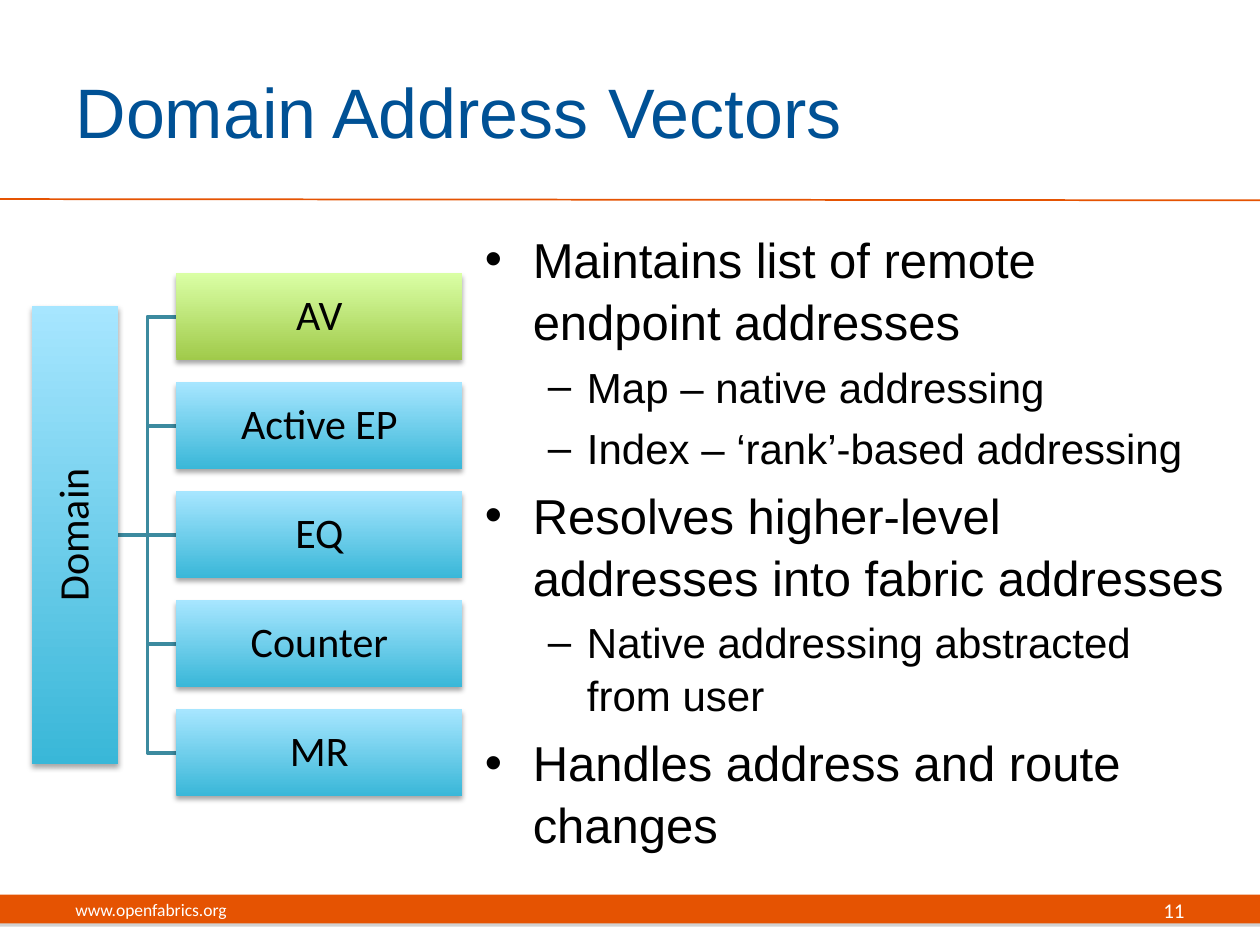
"""Build the Domain Address Vectors slide."""
import pptx
import pptx.dml.color
import pptx.enum.shapes
import pptx.enum.text
import pptx.oxml
import pptx.oxml.ns
import pptx.util

TITLE = "Domain Address Vectors"
ROOT = "Domain"
CHILDREN = ["AV", "Active EP", "EQ", "Counter", "MR"]
HIGHLIGHT = "AV"
POINTS = [
    (0, "Maintains list of remote endpoint addresses"),
    (1, "Map – native addressing"),
    (1, "Index – ‘rank’-based addressing"),
    (0, "Resolves higher-level addresses into fabric addresses"),
    (1, "Native addressing abstracted from user"),
    (0, "Handles address and route changes"),
]
LEVELS = [
    {"size": 28, "bullet": "•", "margin": 0.38, "hanging": 0.38},
    {"size": 24, "bullet": "–", "margin": 0.81, "hanging": 0.31},
]
SITE, NUMBER = "www.openfabrics.org", "11"
COLORS = {
    "title": "005195", "text": "000000", "light": "FFFFFF", "accent": "E55302",
    "branch": "3C8A9F", "bar_shadow": "808080", "shadow": "000000",
}
GRADIENTS = {"blue": ("39B7D8", "A7E6FF"), "green": ("A0CA4A", "DAFFA5")}
WIDTH, HEIGHT = 10, 7.5
MARGIN = WIDTH * 0.05
NODE_HEIGHT, NODE_WIDTH, ROOT_LENGTH = 0.69, 2.27, 3.64
NODE_LEFT, NODE_TOP, NODE_PITCH = 1.4, 2.17, 0.865
ROOT_LEFT = 0.25
FOOTER_TOP, FOOTER_HEIGHT = 7.02, 0.4

Inches = pptx.util.Inches
Align = pptx.enum.text.PP_ALIGN
Anchor = pptx.enum.text.MSO_ANCHOR
RECTANGLE = pptx.enum.shapes.MSO_SHAPE.RECTANGLE


def rgb(name):
    return pptx.dml.color.RGBColor.from_string(COLORS.get(name, name))


def inches(*lengths):
    return [Inches(length) for length in lengths]


def write(paragraph, text, size, font="Calibri", color="text", align=Align.LEFT,
          spacing=None, before=0, bullet=None, margin=0, hanging=0):
    if bullet:
        properties = paragraph._p.get_or_add_pPr()
        properties.set("marL", str(Inches(margin)))
        properties.set("indent", str(-Inches(hanging)))
        for tag, attribute, value in (("buFont", "typeface", font), ("buChar", "char", bullet)):
            element = properties.makeelement(pptx.oxml.ns.qn(f"a:{tag}"), {attribute: value})
            properties.append(element)
    paragraph.alignment = align
    paragraph.space_before = pptx.util.Pt(before)
    if spacing:
        paragraph.line_spacing = spacing
    span = paragraph.add_run()
    span.text = text
    span.font.size = pptx.util.Pt(size)
    span.font.name = font
    span.font.color.rgb = rgb(color)


def add_box(page, *place):
    frame = page.shapes.add_textbox(*inches(*place)).text_frame
    frame.word_wrap = True
    return frame


def set_shadow(shape, color, blur, distance):
    shape.shadow.inherit = False
    effects = shape._element.spPr.find(pptx.oxml.ns.qn("a:effectLst"))
    effects.append(pptx.oxml.parse_xml(
        f'<a:outerShdw {pptx.oxml.ns.nsdecls("a")} blurRad="{pptx.util.Pt(blur)}" '
        f'dist="{pptx.util.Pt(distance)}" dir="5400000" rotWithShape="0">'
        f'<a:srgbClr val="{COLORS[color]}"><a:alpha val="35000"/></a:srgbClr></a:outerShdw>'))


def add_node(page, label, place, palette="blue", rotation=0):
    node = page.shapes.add_shape(RECTANGLE, *inches(*place))
    node.rotation = rotation
    node.line.fill.background()
    node.fill.gradient()
    node.fill.gradient_angle = 90
    for stop, color in zip(node.fill.gradient_stops, GRADIENTS[palette]):
        stop.color.rgb = rgb(color)
    node._element.spPr.find(pptx.oxml.ns.qn("a:gradFill")).set("rotWithShape", "0")
    set_shadow(node, "shadow", 3.1, 1.8)
    frame = node.text_frame
    frame.word_wrap = True
    frame.vertical_anchor = Anchor.MIDDLE
    frame.margin_left = frame.margin_right = Inches(0.02)
    frame.margin_top = frame.margin_bottom = Inches(0.02)
    write(frame.paragraphs[0], label, 24, align=Align.CENTER, spacing=0.9)


def add_branch(page, start, end):
    (left, top), (right, bottom) = inches(*start), inches(*end)
    middle = (left + right) // 2
    builder = page.shapes.build_freeform(left, top)
    builder.add_line_segments([(middle, top), (middle, bottom), (right, bottom)], close=False)
    branch = builder.convert_to_shape()
    branch.fill.background()
    branch.line.color.rgb = rgb("branch")
    branch.line.width = pptx.util.Pt(2)
    branch.shadow.inherit = False


def add_frame(page):
    bar = page.shapes.add_shape(RECTANGLE, *inches(0, 7.1, WIDTH, 0.23))
    bar.fill.solid()
    bar.fill.fore_color.rgb = rgb("accent")
    bar.line.fill.background()
    set_shadow(bar, "bar_shadow", 0, 1.8)
    rule = page.shapes.add_connector(
        pptx.enum.shapes.MSO_CONNECTOR.STRAIGHT, *inches(0, 1.58, WIDTH, 1.59))
    rule.line.color.rgb = rgb("accent")
    rule.line.width = pptx.util.Pt(1)
    properties = rule._element.spPr
    properties.append(properties.makeelement(pptx.oxml.ns.qn("a:effectLst"), {}))
    for text, size, width, left, align in (
            (SITE, 10, 3.17, MARGIN, Align.LEFT),
            (NUMBER, 12, 2.33, WIDTH - MARGIN - 2.33, Align.RIGHT)):
        frame = add_box(page, left, FOOTER_TOP, width, FOOTER_HEIGHT)
        frame.vertical_anchor = Anchor.MIDDLE
        write(frame.paragraphs[0], text, size, color="light", align=align)


def add_title(page):
    title = page.shapes.title
    title.left, title.top, title.width, title.height = inches(MARGIN, 0.25, 8.17, 1.25)
    title.text_frame.vertical_anchor = Anchor.MIDDLE
    write(title.text_frame.paragraphs[0], TITLE, 40, font="Arial", color="title")


def add_points(page):
    frame = add_box(page, 3.75, 1.75, 6.08, 4.95)
    for index, (level, text) in enumerate(POINTS):
        paragraph = frame.add_paragraph() if index else frame.paragraphs[0]
        paragraph.level = level
        style = LEVELS[level]
        write(paragraph, text, font="Arial", spacing=1.05,
              before=style["size"] * 0.2 if index else 0, **style)


def add_tree(page):
    tops = [NODE_TOP + row * NODE_PITCH for row in range(len(CHILDREN))]
    center = (tops[0] + tops[-1] + NODE_HEIGHT) / 2
    for top in tops:
        add_branch(page, (ROOT_LEFT + NODE_HEIGHT, center), (NODE_LEFT, top + NODE_HEIGHT / 2))
    root_left = ROOT_LEFT + (NODE_HEIGHT - ROOT_LENGTH) / 2
    add_node(page, ROOT, (root_left, center - NODE_HEIGHT / 2, ROOT_LENGTH, NODE_HEIGHT),
             rotation=270)
    for label, top in zip(CHILDREN, tops):
        add_node(page, label, (NODE_LEFT, top, NODE_WIDTH, NODE_HEIGHT),
                 palette="green" if label == HIGHLIGHT else "blue")


def main():
    deck = pptx.Presentation()
    deck.slide_width, deck.slide_height = inches(WIDTH, HEIGHT)
    page = deck.slides.add_slide(deck.slide_layouts[5])
    add_frame(page)
    add_title(page)
    add_points(page)
    add_tree(page)
    deck.save("out.pptx")


if __name__ == "__main__":
    main()
